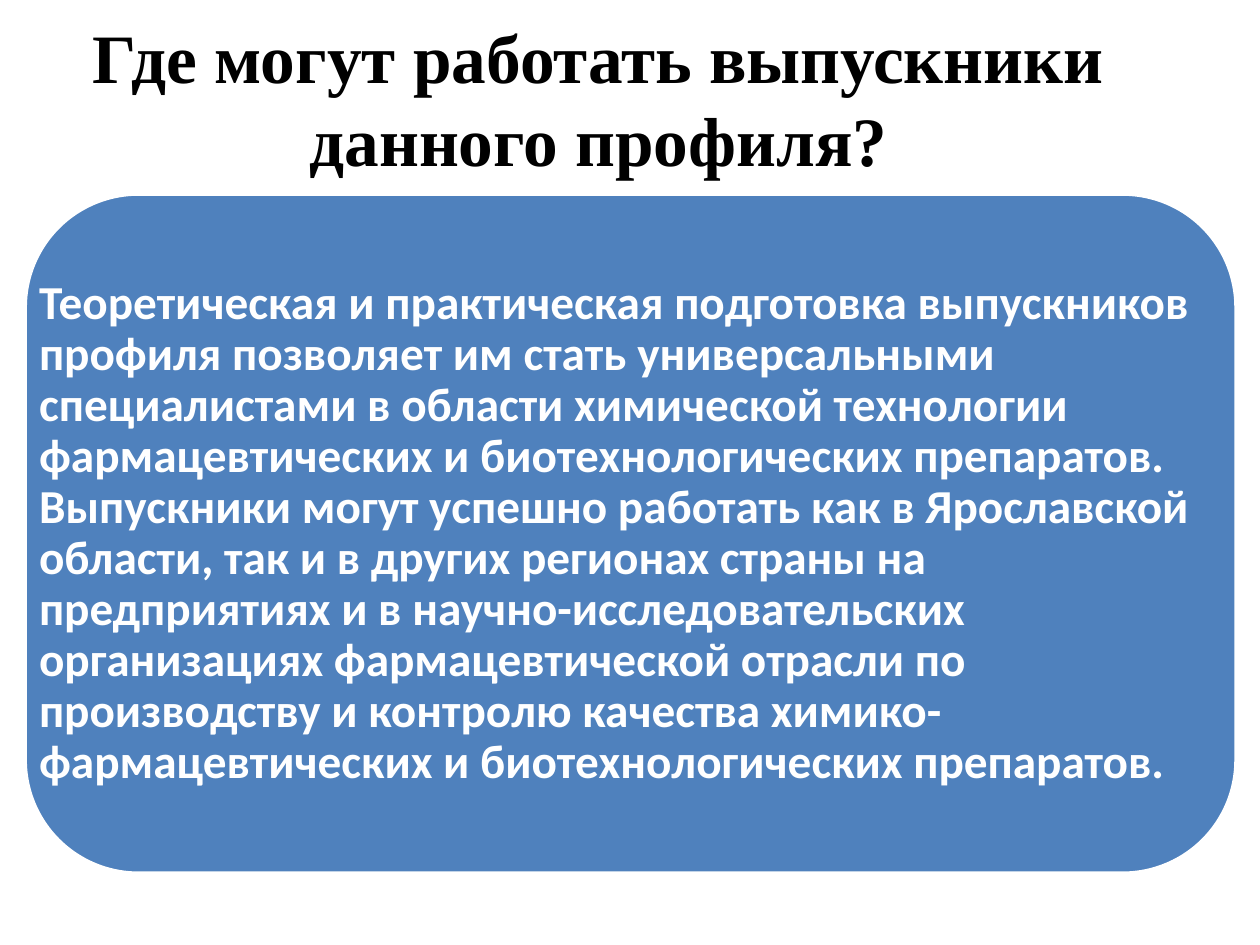
"""Build a slide on where graduates of the programme can work."""
from dataclasses import dataclass

from pptx import Presentation
from pptx.dml.color import RGBColor
from pptx.enum.shapes import MSO_SHAPE
from pptx.enum.text import MSO_ANCHOR, PP_ALIGN
from pptx.util import Inches, Pt

ROUNDED = MSO_SHAPE.ROUNDED_RECTANGLE
MIDDLE = MSO_ANCHOR.MIDDLE
LEFT, CENTER = PP_ALIGN.LEFT, PP_ALIGN.CENTER

TITLE = "Где могут работать выпускники данного профиля?"
BODY = (
    "Теоретическая и практическая подготовка выпускников профиля позволяет им "
    "стать универсальными специалистами в области химической технологии "
    "фармацевтических и биотехнологических препаратов. Выпускники могут успешно "
    "работать как в Ярославской области, так и в других регионах страны на "
    "предприятиях и в научно-исследовательских организациях фармацевтической "
    "отрасли по производству и контролю качества химико-фармацевтических и "
    "биотехнологических препаратов."
)


@dataclass(frozen=True)
class Theme:
    ink: RGBColor = RGBColor(0, 0, 0)
    paper: RGBColor = RGBColor(255, 255, 255)
    accent: RGBColor = RGBColor(0x4F, 0x81, 0xBD)
    title_font: str = "Times New Roman"
    body_font: str = "Calibri"
    title_size: float = 39.6
    body_size: float = 27
    outline: float = 2
    inset: float = 0.11


class SlideBuilder:
    COLS, ROWS = 100, 75

    def __init__(self, prs, theme):
        self.theme = theme
        self.cell_w = prs.slide_width / self.COLS
        self.cell_h = prs.slide_height / self.ROWS
        self.slide = prs.slides.add_slide(prs.slide_layouts[6])

    def box(self, col, row, cols, rows):
        return (round(col * self.cell_w), round(row * self.cell_h),
                round(cols * self.cell_w), round(rows * self.cell_h))

    def panel(self, area):
        sp = self.slide.shapes.add_shape(ROUNDED, *self.box(*area))
        sp.shadow.inherit = False
        sp.fill.solid()
        sp.fill.fore_color.rgb = self.theme.accent
        sp.line.color.rgb = self.theme.paper
        sp.line.width = Pt(self.theme.outline)

    def text(self, area, text, font, size, color, align=LEFT, spacing=1.0):
        tf = self.slide.shapes.add_textbox(*self.box(*area)).text_frame
        tf.word_wrap = True
        tf.vertical_anchor = MIDDLE
        tf.margin_left = tf.margin_right = Inches(self.theme.inset)
        tf.margin_top = tf.margin_bottom = Inches(self.theme.inset)
        p = tf.paragraphs[0]
        p.text = text
        p.alignment = align
        p.line_spacing = spacing
        p.font.name = font
        p.font.size = Pt(size)
        p.font.bold = True
        p.font.color.rgb = color


def main():
    prs = Presentation()
    prs.slide_width, prs.slide_height = Inches(10), Inches(7.5)
    theme = Theme()
    s = SlideBuilder(prs, theme)
    s.text((0, 0, 95, 15.5), TITLE, theme.title_font, theme.title_size,
           theme.ink, align=CENTER)
    panel_area = (2, 15.4, 96.1, 53.9)
    s.panel(panel_area)
    s.text(panel_area, BODY, theme.body_font, theme.body_size,
           theme.paper, spacing=0.9)
    prs.save("out.pptx")


if __name__ == "__main__":
    main()
